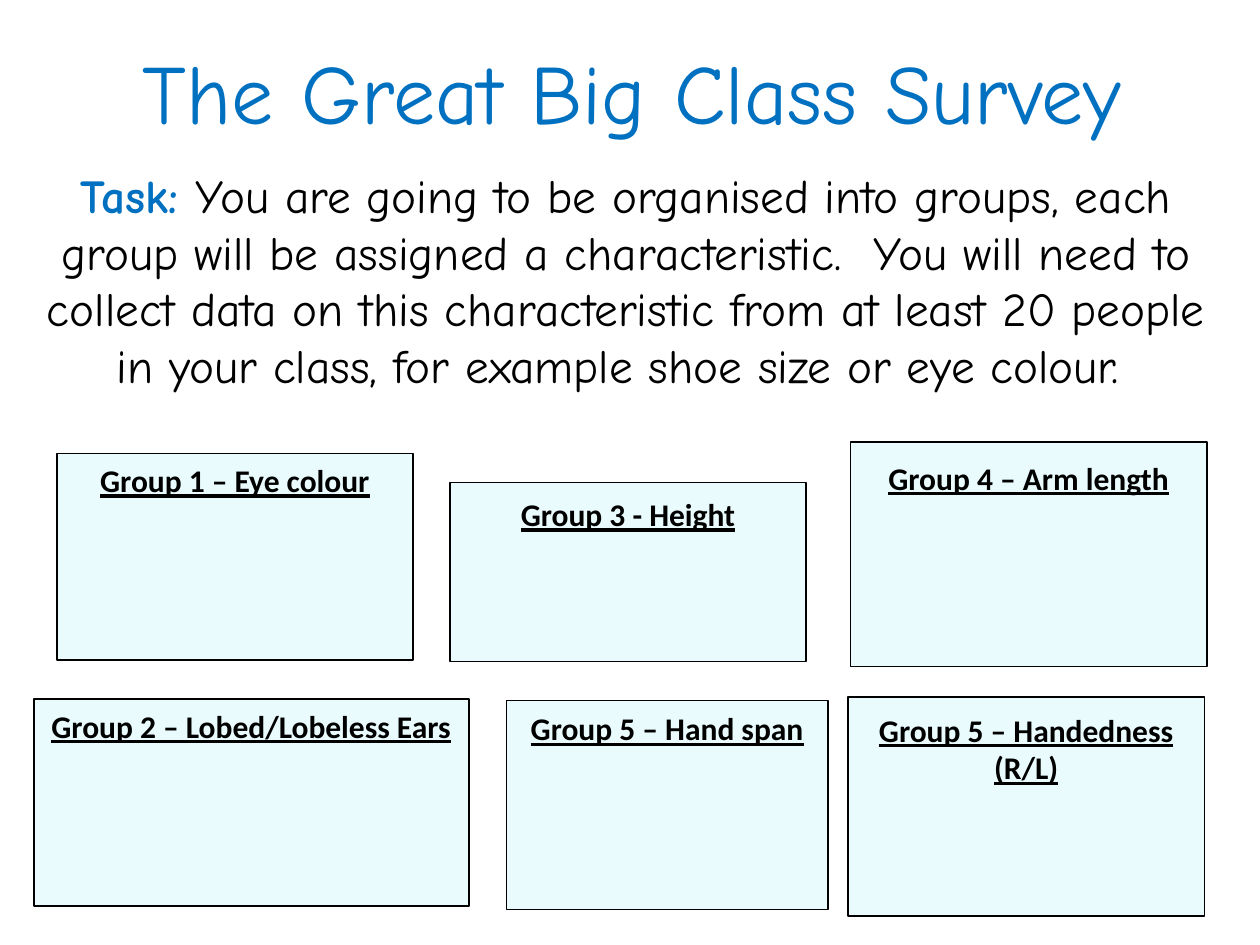
from pptx import Presentation
from pptx.dml.color import RGBColor
from pptx.enum.shapes import MSO_SHAPE
from pptx.enum.text import MSO_ANCHOR, MSO_AUTO_SIZE, PP_ALIGN
from pptx.util import Inches, Pt

BLUE = RGBColor(0x00, 0x70, 0xC0)
BLACK = RGBColor(0x00, 0x00, 0x00)
PALE_BLUE = RGBColor(0xE9, 0xFB, 0xFD)
HEADING_FONT = "Comic Neue"
GROUP_FONT = "Calibri"

TASK = (
    "You are going to be organised into groups, each group will be assigned "
    "a characteristic.  You will need to collect data on this characteristic "
    "from at least 20 people in your class, for example shoe size or eye colour. "
)

# Label, box (left, top, width, height) and gap above the label, in inches
GROUPS = [
    ("Group 1 – Eye colour", (0.45, 3.6, 2.83, 1.64), 0.06),
    ("Group 2 – Lobed/Lobeless Ears", (0.27, 5.55, 3.45, 1.64), 0.06),
    ("Group 3 - Height", (3.57, 3.83, 2.83, 1.42), 0.1),
    ("Group 4 – Arm length", (6.75, 3.51, 2.83, 1.78), 0.13),
    ("Group 5 – Handedness (R/L)", (6.73, 5.53, 2.83, 1.74), 0.11),
    ("Group 5 – Hand span", (4.02, 5.56, 2.55, 1.66), 0.07),
]


def style_span(span, font, size, color, bold=False, underline=False):
    span.font.name = font
    span.font.size = Pt(size)
    span.font.color.rgb = color
    span.font.bold = bold
    span.font.underline = underline


def prepare_frame(frame):
    frame.word_wrap = True
    frame.auto_size = MSO_AUTO_SIZE.NONE
    frame.vertical_anchor = MSO_ANCHOR.TOP
    frame.paragraphs[0].alignment = PP_ALIGN.CENTER


def place_title(page, box):
    title = page.shapes.title
    title.left, title.top, title.width, title.height = map(Inches, box)
    title.text_frame.text = "The Great Big Class Survey"
    prepare_frame(title.text_frame)
    style_span(title.text_frame.paragraphs[0].runs[0], HEADING_FONT, 48, BLUE)


def add_task(page, box):
    frame = page.shapes.add_textbox(*map(Inches, box)).text_frame
    prepare_frame(frame)
    for text, color, bold in [("Task: ", BLUE, True), (TASK, BLACK, False)]:
        span = frame.paragraphs[0].add_run()
        span.text = text
        style_span(span, HEADING_FONT, 27, color, bold)


def add_group(page, label, box, gap):
    card = page.shapes.add_shape(MSO_SHAPE.RECTANGLE, *map(Inches, box))
    card.shadow.inherit = False
    card.fill.solid()
    card.fill.fore_color.rgb = PALE_BLUE
    card.line.color.rgb = BLACK
    card.line.width = Pt(1)
    frame = card.text_frame
    frame.text = label
    prepare_frame(frame)
    frame.margin_top = Inches(gap)
    style_span(frame.paragraphs[0].runs[0], GROUP_FONT, 18, BLACK, True, True)


def main():
    deck = Presentation()
    deck.slide_width, deck.slide_height = Inches(10), Inches(7.5)
    page = deck.slides.add_slide(deck.slide_layouts.get_by_name("Title Only"))

    # Heading and task
    place_title(page, (0.46, 0.27, 9.11, 0.91))
    add_task(page, (0.22, 1.27, 9.49, 2.37))

    # Recording boxes for the groups
    for label, box, gap in GROUPS:
        add_group(page, label, box, gap)

    deck.save("out.pptx")


if __name__ == "__main__":
    main()
